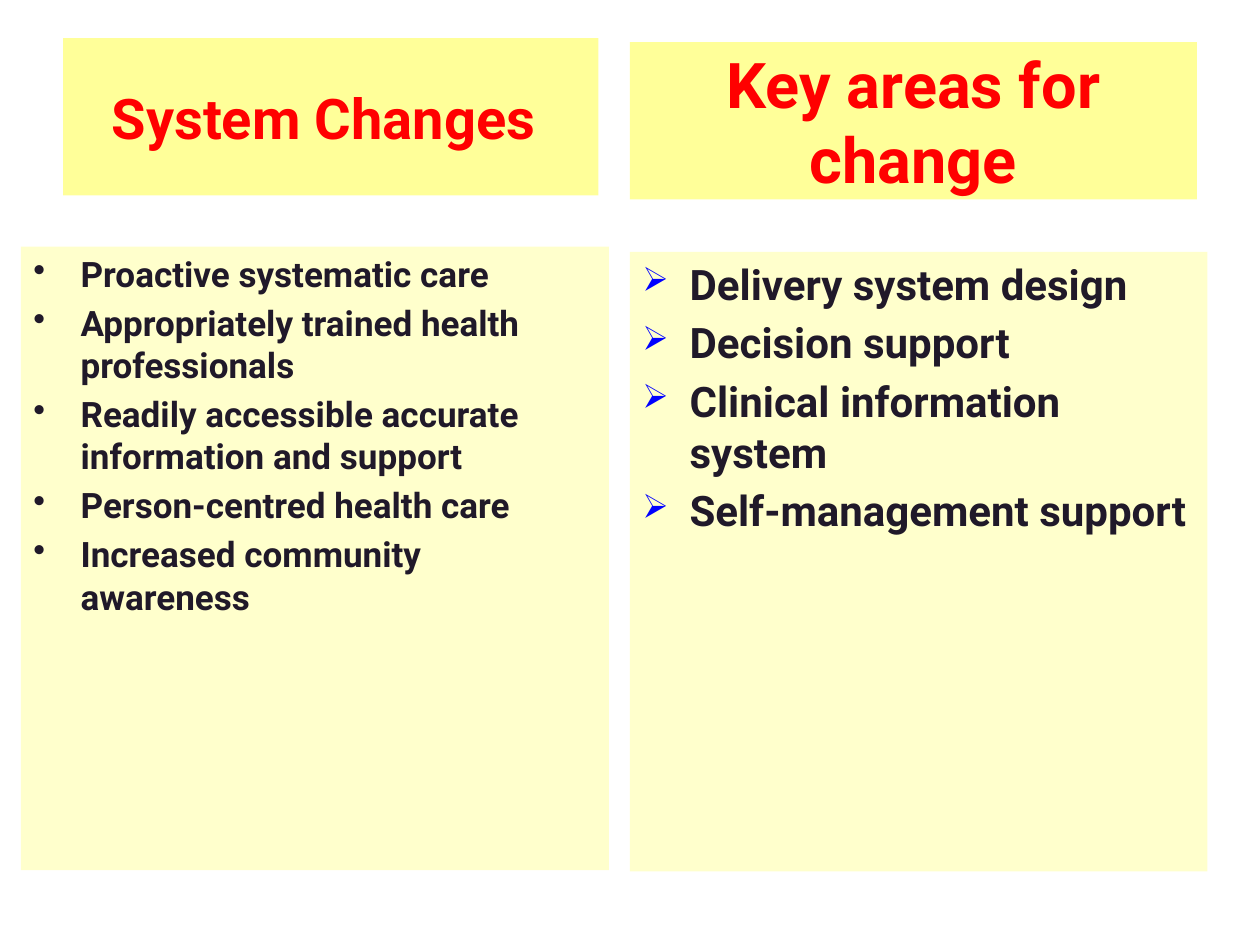
"""Build a slide that pairs system changes with the key areas for change."""
from dataclasses import dataclass

from lxml.etree import SubElement as Sub
from pptx import Presentation
from pptx.dml.color import RGBColor as Rgb
from pptx.enum.text import MSO_ANCHOR as Anchor, MSO_AUTO_SIZE as Auto, PP_ALIGN as Align
from pptx.oxml.ns import qn
from pptx.util import Pt


@dataclass
class Theme:
    font: str = "Roboto"
    head: str = "FF0000"
    ink: str = "201929"
    band: str = "FFFF99"
    panel: str = "FFFFCC"
    mark: str = "0000FF"
    title: int = 32
    topic: int = 36
    small: int = 20
    large: int = 24


PX = 9525
look = Theme()


def fill_box(box, area, back, lines, size, ink, anchor, align):
    for name, value in zip(("left", "top", "width", "height"), area):
        setattr(box, name, value * PX)
    box.fill.solid()
    box.fill.fore_color.rgb = Rgb.from_string(back)
    frame = box.text_frame
    frame.text = "\n".join(lines)
    form = {"word_wrap": True, "auto_size": Auto.NONE, "vertical_anchor": anchor}
    for name, value in form.items():
        setattr(frame, name, value)
    style = {"name": look.font, "size": Pt(size), "bold": True}
    for para in frame.paragraphs:
        para.alignment = align
        font = para.runs[0].font
        for name, value in style.items():
            setattr(font, name, value)
        font.color.rgb = Rgb.from_string(ink)


def add_marks(box, sign, tint, scale):
    for para in box.text_frame.paragraphs:
        props = para._p.get_or_add_pPr()
        for name, value in {"marL": 36 * PX, "indent": -36 * PX}.items():
            props.set(name, str(value))
        gap = Sub(props, qn("a:spcBef"))
        Sub(gap, qn("a:spcPct"), val="20000")
        color = Sub(props, qn("a:buClr"))
        Sub(color, qn("a:srgbClr"), val=tint)
        Sub(props, qn("a:buSzPct"), val=str(scale * 1000))
        Sub(props, qn("a:buChar"), char=sign)


deck = Presentation()
deck.slide_width, deck.slide_height = 960 * PX, 720 * PX
slide = deck.slides.add_slide(deck.slide_layouts[5])
shapes = slide.shapes

heads = [
    (shapes.title, (48, 29, 408, 120), "System Changes ", look.title),
    (shapes.add_textbox(0, 0, 0, 0), (480, 32, 432, 120), "Key areas for change", look.topic),
]
for box, area, text, size in heads:
    fill_box(box, area, look.band, [text], size, look.head, Anchor.MIDDLE, Align.CENTER)

changes = [
    "Proactive systematic care",
    "Appropriately trained health professionals",
    "Readily accessible accurate information and support",
    "Person-centred health care",
    "Increased community awareness",
]
areas = [
    "Delivery system design",
    "Decision support",
    "Clinical information system",
    "Self-management support",
]
lists = [
    ((16, 188, 448, 475), changes, look.small, "•", look.ink, 100),
    ((480, 192, 440, 472), areas, look.large, "➢", look.mark, 80),
]
for area, lines, size, sign, tint, scale in lists:
    box = shapes.add_textbox(0, 0, 0, 0)
    fill_box(box, area, look.panel, lines, size, look.ink, Anchor.TOP, Align.LEFT)
    add_marks(box, sign, tint, scale)

deck.save("out.pptx")
